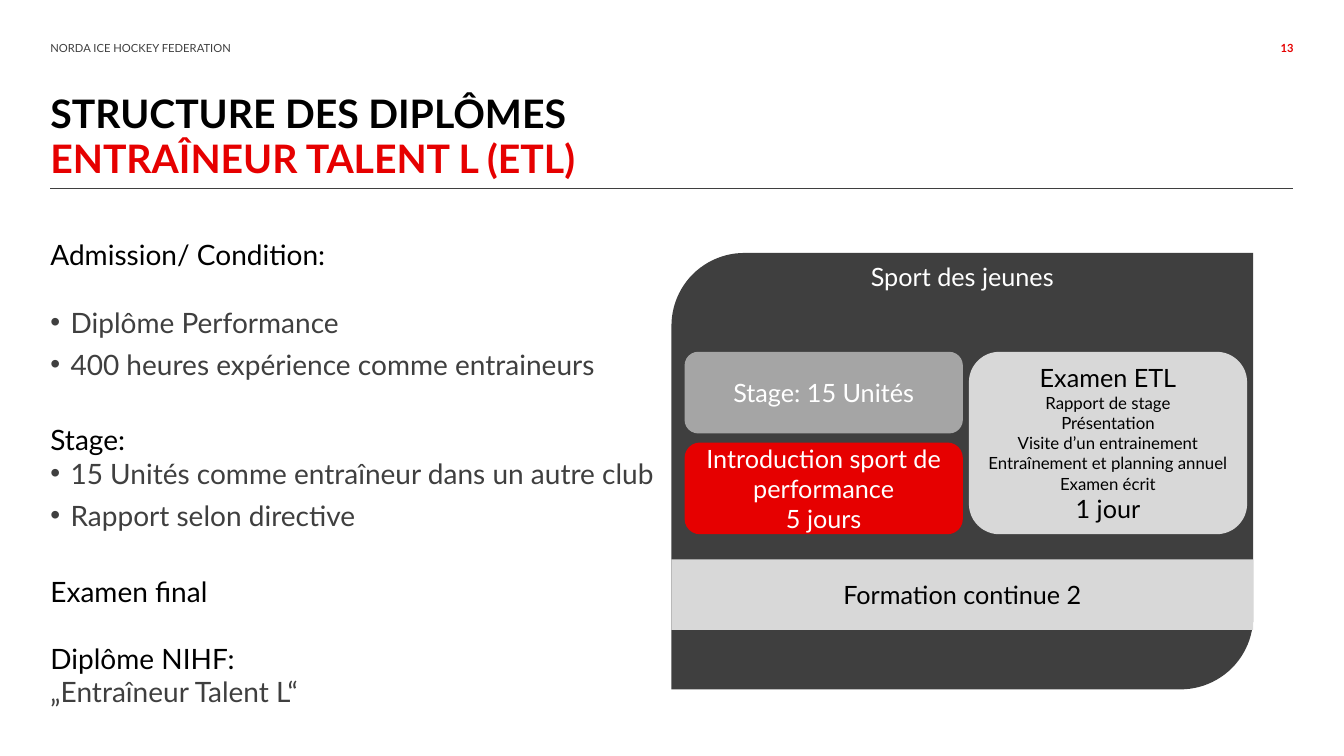
from lxml import etree
from pptx import Presentation
from pptx.dml.color import RGBColor
from pptx.enum.shapes import MSO_CONNECTOR, MSO_SHAPE
from pptx.enum.text import MSO_ANCHOR, PP_ALIGN
from pptx.oxml.ns import qn
from pptx.util import Inches, Pt

LEFT, CENTER, RIGHT = PP_ALIGN.LEFT, PP_ALIGN.CENTER, PP_ALIGN.RIGHT
TOP, MIDDLE = MSO_ANCHOR.TOP, MSO_ANCHOR.MIDDLE
RECT, ROUNDED = MSO_SHAPE.RECTANGLE, MSO_SHAPE.ROUNDED_RECTANGLE
DIAGONAL = MSO_SHAPE.ROUND_2_DIAG_RECTANGLE
STRAIGHT = MSO_CONNECTOR.STRAIGHT

BLACK, WHITE, RED = "000000", "FFFFFF", "E60000"
DARK, MID, LIGHT = "3F3F3F", "A5A5A5", "D8D8D8"


def color(hex_string):
    return RGBColor.from_string(hex_string)


def write(para, text, size, hex_string, align=LEFT, bold=False):
    para.text = text
    para.alignment = align
    for span in para.runs:
        span.font.name = "Lato"
        span.font.size = Pt(size)
        span.font.bold = bold
        span.font.color.rgb = color(hex_string)


deck = Presentation()
deck.slide_width, deck.slide_height = Inches(13.33), Inches(7.5)
page = deck.slides.add_slide(deck.slide_layouts[6])

# Header, page number and the two title lines
headings = [
    ("NORDA ICE HOCKEY FEDERATION", 0.5, 0.28, 1.8, 8, DARK, LEFT, False, 1),
    ("13", 12.29, 0.28, 0.54, 8, RED, RIGHT, True, 1),
    ("STRUCTURE DES DIPLÔMES", 0.5, 0.92, 10.7, 28, BLACK, LEFT, True, 1),
    ("ENTRAÎNEUR TALENT L (ETL)", 0.5, 1.34, 10.7, 28, RED, LEFT, True, 1.1),
]
for text, left, top, width, size, hue, align, bold, spacing in headings:
    box = page.shapes.add_textbox(Inches(left), Inches(top), Inches(width), Inches(0.4))
    frame = box.text_frame
    frame.word_wrap = True
    frame.vertical_anchor = MIDDLE
    frame.margin_left = frame.margin_right = frame.margin_top = frame.margin_bottom = 0
    write(frame.paragraphs[0], text, size, hue, align, bold)
    frame.paragraphs[0].line_spacing = spacing

# Rule under the title
rule = page.shapes.add_connector(STRAIGHT, Inches(0.5), Inches(1.87), Inches(12.82), Inches(1.87))
rule.line.color.rgb = color(DARK)
rule.line.width = Pt(0.5)
etree.SubElement(rule._element.spPr, qn("a:effectLst"))

# Requirements: text, colour, bulleted, space before, space after
requirements = [
    ("Admission/ Condition:", BLACK, False, 0, 0),
    ("Diplôme Performance", DARK, True, 24, 6),
    ("400 heures expérience comme entraineurs", DARK, True, 0, 6),
    ("Stage:", BLACK, False, 24, 0),
    ("15 Unités comme entraîneur dans un autre club", DARK, True, 0, 6),
    ("Rapport selon directive", DARK, True, 0, 6),
    ("Examen final", BLACK, False, 24, 0),
    ("Diplôme NIHF:", BLACK, False, 24, 0),
    ("„Entraîneur Talent L“", DARK, False, 0, 6),
]
box = page.shapes.add_textbox(Inches(0.5), Inches(2.36), Inches(12.33), Inches(4.65))
frame = box.text_frame
frame.word_wrap = True
frame.margin_left = frame.margin_right = frame.margin_top = frame.margin_bottom = 0
for index, (text, hue, bulleted, before, after) in enumerate(requirements):
    para = frame.add_paragraph() if index else frame.paragraphs[0]
    write(para, text, 20, hue)
    para.space_before, para.space_after = Pt(before), Pt(after)
    if bulleted:
        properties = para._p.get_or_add_pPr()
        properties.set("marL", str(Inches(0.2)))
        properties.set("indent", str(-Inches(0.2)))
        etree.SubElement(properties, qn("a:buFont")).set("typeface", "Arial")
        etree.SubElement(properties, qn("a:buChar")).set("char", "•")

# Diploma diagram: preset, position, fill, font colour, anchor, lines with sizes
exam_parts = ["Rapport de stage", "Présentation", "Visite d’un entrainement",
              "Entraînement et planning annuel", "Examen écrit"]
blocks = [
    (DIAGONAL, 6.66, 2.51, 5.77, 4.33, DARK, WHITE, TOP, [("Sport des jeunes", 18)]),
    (RECT, 6.66, 5.55, 5.77, 0.7, LIGHT, BLACK, MIDDLE, [("Formation continue 2", 18)]),
    (ROUNDED, 9.61, 3.49, 2.76, 1.81, LIGHT, BLACK, MIDDLE,
     [("Examen ETL", 18), *((part, 12) for part in exam_parts), ("1 jour", 18)]),
    (ROUNDED, 6.79, 3.49, 2.76, 0.81, MID, WHITE, MIDDLE, [("Stage: 15 Unités", 18)]),
    (ROUNDED, 6.79, 4.39, 2.76, 0.91, RED, WHITE, MIDDLE,
     [("Introduction sport de performance", 18), ("5 jours", 18)]),
]
for preset, left, top, width, height, fill, hue, anchor, lines in blocks:
    block = page.shapes.add_shape(preset, Inches(left), Inches(top), Inches(width), Inches(height))
    block.shadow.inherit = False
    block.fill.solid()
    block.fill.fore_color.rgb = color(fill)
    block.line.fill.background()
    frame = block.text_frame
    frame.word_wrap = True
    frame.vertical_anchor = anchor
    if anchor == TOP:
        # Lifts the label into the band above the rounded corner's inset
        frame.margin_top = Inches(-0.13)
    for index, (text, size) in enumerate(lines):
        para = frame.add_paragraph() if index else frame.paragraphs[0]
        write(para, text, size, hue, CENTER)

deck.save("out.pptx")
